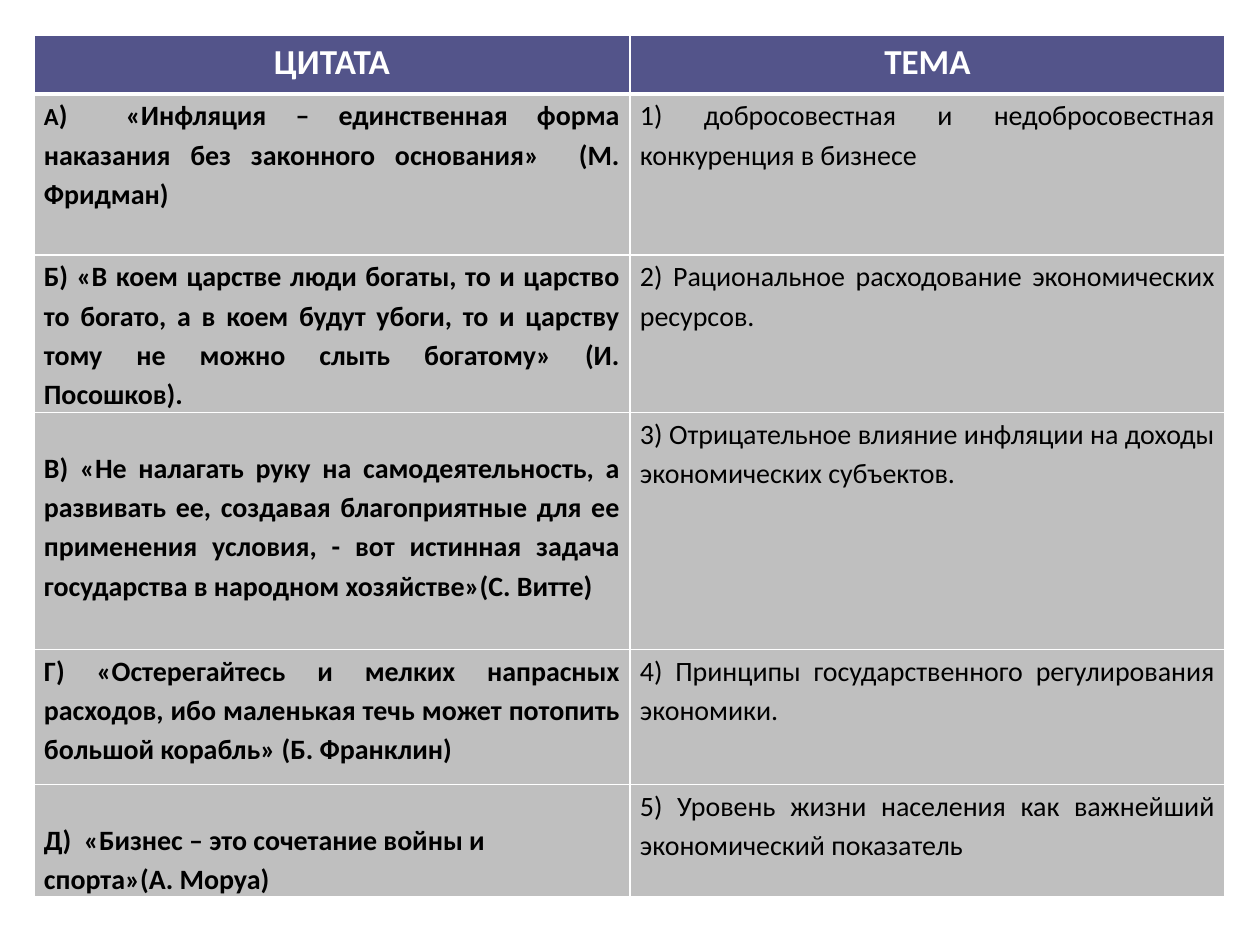
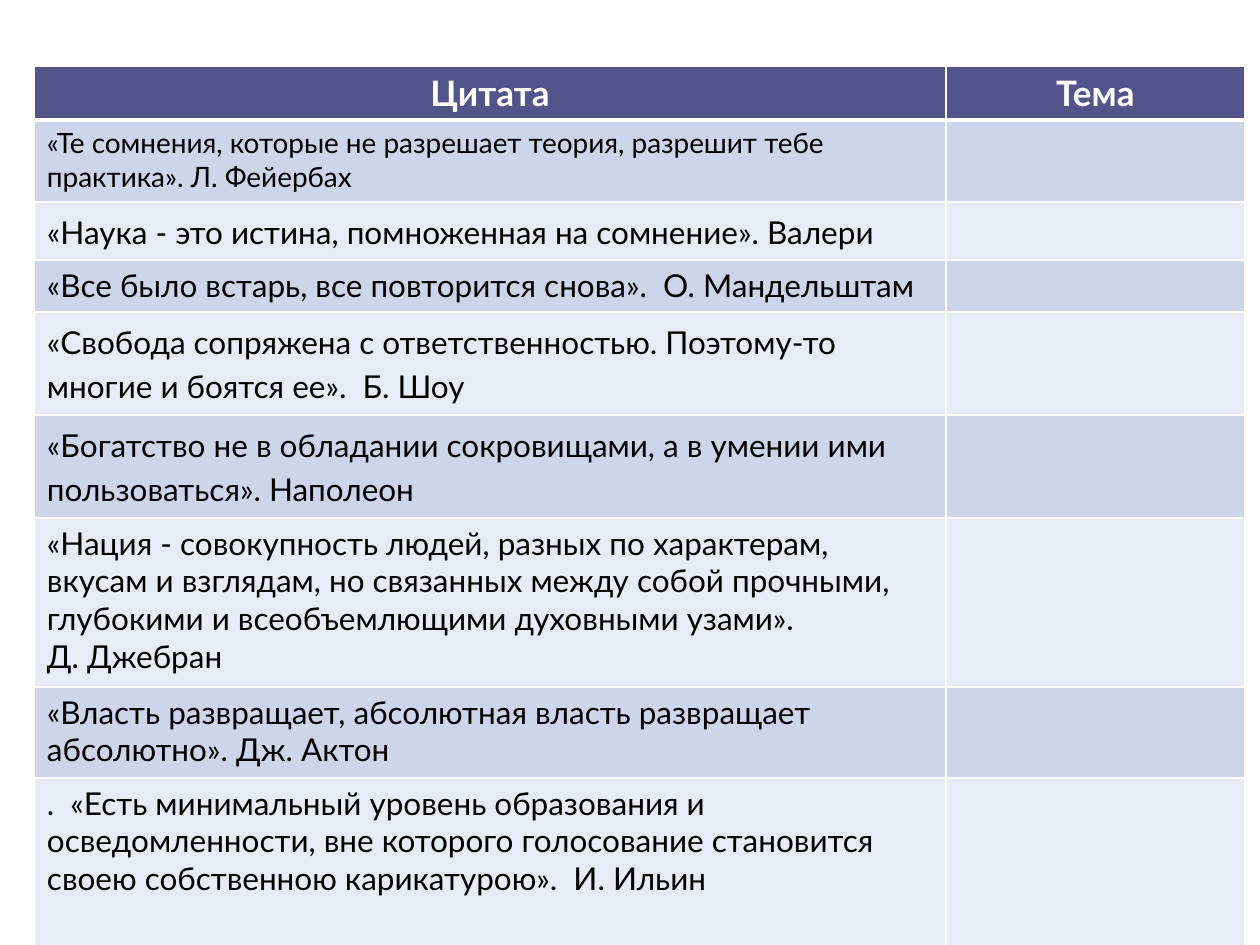
from lxml import etree
from pptx import Presentation
from pptx import util as u
from pptx.dml.color import RGBColor
from pptx.enum import text
from pptx.oxml.ns import qn

PX = 914400 // 126  # one px in EMU
WHITE, BLACK = "FFFFFF", "000000"
HEADER, GREY = "53548A", "BFBFBF"
BANDS = ["CCD5EA", "E7EBF5"]

MATCHING = [
    ("ЦИТАТА", "ТЕМА"),
    ("А)  «Инфляция – единственная форма наказания без законного основания»  (М. Фридман)",
     "1) добросовестная и недобросовестная конкуренция в бизнесе"),
    ("Б) «В коем царстве люди богаты, то и царство то богато, а в коем будут убоги, "
     "то и царству тому не можно слыть богатому» (И. Посошков).",
     "2) Рациональное расходование экономических ресурсов."),
    ("В) «Не налагать руку на самодеятельность, а развивать ее, создавая благоприятные "
     "для ее применения условия, - вот истинная задача государства в народном "
     "хозяйстве»(С. Витте)",
     "3) Отрицательное влияние инфляции на доходы экономических субъектов."),
    ("Г) «Остерегайтесь и мелких напрасных расходов, ибо маленькая течь может потопить "
     "большой корабль» (Б. Франклин)",
     "4) Принципы государственного регулирования экономики."),
    ("Д)  «Бизнес – это сочетание войны и спорта»(А. Моруа)",
     "5) Уровень жизни населения как важнейший экономический показатель"),
]

QUOTES = [
    "«Те сомнения, которые не разрешает теория, разрешит тебе практика». Л. Фейербах",
    "«Наука - это истина, помноженная на сомнение». Валери",
    "«Все было встарь, все повторится снова».  О. Мандельштам",
    "«Свобода сопряжена с ответственностью. Поэтому-то многие и боятся ее».  Б. Шоу",
    "«Богатство не в обладании сокровищами, а в умении ими пользоваться». Наполеон",
    "«Нация - совокупность людей, разных по характерам, вкусам и взглядам, но связанных "
    "между собой прочными, глубокими и всеобъемлющими духовными узами».\nД. Джебран",
    "«Власть развращает, абсолютная власть развращает абсолютно». Дж. Актон",
    ".  «Есть минимальный уровень образования и осведомленности, вне которого голосование "
    "становится своею собственною карикатурою».  И. Ильин",
]


def color(value):
    return RGBColor.from_string(value)


def set_borders(cell, top=1, bottom=1):
    """White cell borders, widths in points."""
    properties = cell._tc.get_or_add_tcPr()
    for side, width in (("L", 1), ("R", 1), ("T", top), ("B", bottom)):
        line = etree.SubElement(properties, qn(f"a:ln{side}"), w=str(u.Pt(width)))
        fill = etree.SubElement(line, qn("a:solidFill"))
        etree.SubElement(fill, qn("a:srgbClr"), val=WHITE)


def set_fill(cell, value):
    cell.fill.solid()
    cell.fill.fore_color.rgb = color(value)


def set_margins(cell, side, vertical):
    cell.margin_left = cell.margin_right = side * PX
    cell.margin_top = cell.margin_bottom = vertical * PX


def format_text(cell, font, size, ink=BLACK, bold=False, align=None, spacing=None):
    for paragraph in cell.text_frame.paragraphs:
        paragraph.alignment = align
        paragraph.line_spacing = spacing
        for run in paragraph.runs:
            run.font.name = font
            run.font.size = u.Pt(size)
            run.font.bold = bold
            run.font.color.rgb = color(ink)


def add_grid(slide, left, top, widths, heights, contents, margins):
    """Table with wording, margins, white borders and header fill."""
    table = slide.shapes.add_table(
        len(heights), len(widths), left * PX, top * PX,
        sum(widths) * PX, sum(heights) * PX).table
    for column, width in zip(table.columns, widths):
        column.width = width * PX
    for index, (height, wording) in enumerate(zip(heights, contents)):
        table.rows[index].height = height * PX
        for cell, words in zip(table.rows[index].cells, wording):
            if words:
                cell.text_frame.text = words
            set_margins(cell, *margins)
            set_borders(cell, top=3 if index == 1 else 1, bottom=1 if index else 3)
            if index == 0:
                set_fill(cell, HEADER)
    return table


def matching_slide(slide, left, top):
    """Quotes beside the themes they are to be matched with."""
    table = add_grid(slide, left, top, [596, 595], [59, 161, 135, 237, 135, 106],
                     MATCHING, (10, 0))
    for row in range(len(MATCHING)):
        for column in range(2):
            cell = table.cell(row, column)
            if row == 0:
                format_text(cell, "Calibri", 20, WHITE, True, text.PP_ALIGN.CENTER, 1.15)
                continue
            last_quote = row == len(MATCHING) - 1 and column == 0
            align = text.PP_ALIGN.LEFT if last_quote else text.PP_ALIGN.JUSTIFY
            set_fill(cell, GREY)
            format_text(cell, "Calibri", 16, bold=column == 0, align=align, spacing=1.15)

    # Smaller letter of the first quote
    opening = table.cell(1, 0).text_frame.paragraphs[0]
    letter = opening.runs[0]
    rest = opening.add_run()
    letter.text, rest.text = letter.text[0], letter.text[1:]
    format_text(table.cell(1, 0), "Calibri", 16, bold=True,
                align=text.PP_ALIGN.JUSTIFY, spacing=1.15)
    letter.font.size = u.Pt(14)

    # Quotes that start one line lower
    for row in (3, 5):
        table.cell(row, 0).margin_top = 34 * PX


def open_slide(slide, left, top):
    """Quotes with an empty theme column to fill in."""
    contents = [("Цитата", "Тема")] + [(quote, "") for quote in QUOTES]
    table = add_grid(slide, left, top, [912, 299],
                     [54, 82, 58, 52, 103, 103, 169, 91, 169], contents, (13, 6))
    for cell in table.rows[0].cells:
        format_text(cell, "Lato", 20, WHITE, True, text.PP_ALIGN.CENTER)
    for row in range(1, len(contents)):
        for cell in table.rows[row].cells:
            set_fill(cell, BANDS[(row - 1) % 2])
        format_text(table.cell(row, 0), "Lato", 16 if row == 1 else 18,
                    spacing=1.15 if row in (2, 4, 5) else None)


def main():
    deck = Presentation()
    deck.slide_width, deck.slide_height = u.Inches(10), u.Inches(7.5)
    blank = deck.slide_layouts[6]
    matching_slide(deck.slides.add_slide(blank), 34, 35)
    open_slide(deck.slides.add_slide(blank), 34, 66)
    deck.save("out.pptx")


if __name__ == "__main__":
    main()
